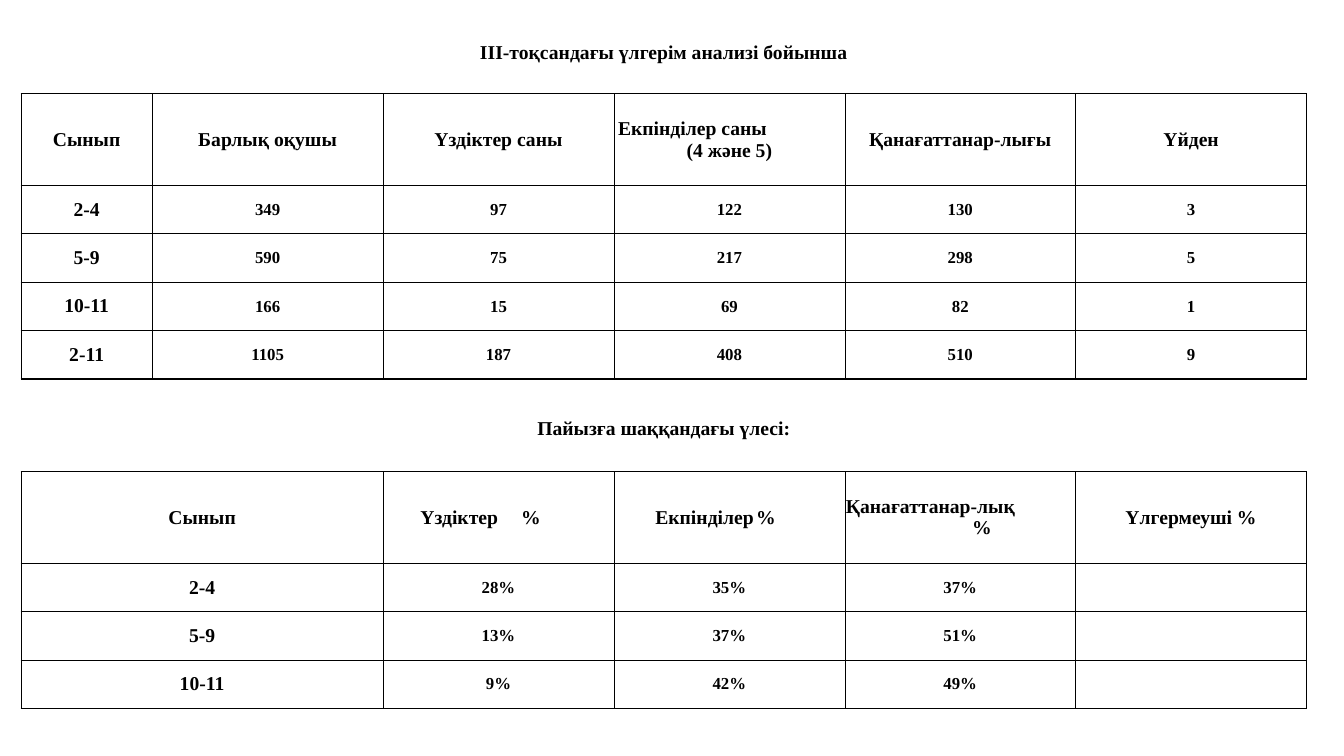
"""Build a slide with the term results and their shares in per cent."""
from pptx import Presentation
from pptx.dml.color import RGBColor
from pptx.enum import text as t
from pptx.oxml import parse_xml
from pptx.oxml.ns import nsdecls
from pptx.util import Inches, Pt

HUES = {"ink": "000000"}
FONT = "Times New Roman"
PLAIN = "{2D5ABB26-0587-4C30-8999-92F81FD0307C}"
MID, LEFT = t.PP_ALIGN.CENTER, t.PP_ALIGN.LEFT
WIDTHS = [1.3] + [2.29] * 5
HEIGHTS = [0.39, 0.21, 0.91] + [0.48] * 4 + [0.3, 0.3, 0.32, 0.91] + [0.48] * 3

COUNTS = [
    ["Сынып", "Барлық оқушы", "Үздіктер саны", "", "Қанағаттанар-лығы", "Үйден"],
    ["2-4", "349", "97", "122", "130", "3"],
    ["5-9", "590", "75", "217", "298", "5"],
    ["10-11", "166", "15", "69", "82", "1"],
    ["2-11", "1105", "187", "408", "510", "9"],
]
SHARES = [
    ["Сынып", "", "", "", "", "Үлгермеуші %"],
    ["2-4", "", "28%", "35%", "37%", ""],
    ["5-9", "", "13%", "37%", "51%", ""],
    ["10-11", "", "9%", "42%", "49%", ""],
]


def write(cell, words, size=14, align=MID, indent=0, tab=None, more=False):
    """Write one bold paragraph into a cell."""
    frame = cell.text_frame
    para = frame.add_paragraph() if more else frame.paragraphs[0]
    para.alignment = align
    props = para._p.get_or_add_pPr()
    props.set("marL", str(Inches(indent)))
    props.set("indent", "0")
    if tab:
        props.append(parse_xml(
            f'<a:tabLst {nsdecls("a")}><a:tab pos="{Inches(tab)}" algn="l"/></a:tabLst>'))
    run = para.add_run()
    run.text = words
    font = run.font
    font.name, font.size, font.bold = FONT, Pt(size), True
    font.color.rgb = RGBColor.from_string(HUES["ink"])


def clear(cell):
    """Strip a cell of insets and fill, and keep its empty line small."""
    cell.margin_left = cell.margin_right = cell.margin_top = cell.margin_bottom = 0
    cell.vertical_anchor = t.MSO_ANCHOR.MIDDLE
    cell.fill.background()
    cell.text_frame.paragraphs[0]._p.append(
        parse_xml(f'<a:endParaRPr {nsdecls("a")} sz="1000"/>'))


def edge(cell, outer):
    """Draw the four borders of a cell, heavier on its outer sides."""
    props = cell._tc.get_or_add_tcPr()
    for spot, side in enumerate("LRTB"):
        width = Pt(1 if side in outer else 0.5)
        props.insert(spot, parse_xml(
            f'<a:ln{side} {nsdecls("a")} w="{width}"><a:solidFill>'
            f'<a:srgbClr val="{HUES["ink"]}"/></a:solidFill></a:ln{side}>'))


def block(table, top, rows):
    """Fill a bordered block of the table from the given row down."""
    last = len(rows) - 1
    for r, row in enumerate(rows):
        for c, words in enumerate(row):
            cell = table.cell(top + r, c)
            if words:
                write(cell, words, 12 if r and c else 14)
            ends = {"L": c == 0, "R": c == len(row) - 1, "T": r == 0, "B": r == last}
            edge(cell, [side for side, on in ends.items() if on])


def head(table, row, words, anchor):
    """Write a heading across the whole table."""
    cell = table.cell(row, 0)
    cell.merge(table.cell(row, len(WIDTHS) - 1))
    cell.vertical_anchor = anchor
    write(cell, words)


def split(cell, first, second, indent, shift):
    """Write a label on two lines, the second one centred past a shift."""
    write(cell, first, align=LEFT, indent=indent)
    write(cell, second, indent=shift, more=True)


def spread(cell, words, inset, tab):
    """Write a label with its unit set apart at a tab stop."""
    cell.margin_left = Inches(inset)
    write(cell, f"{words}\t%", align=LEFT, tab=tab)


def report(slide, left, top):
    """Place the table with both blocks and their headings."""
    frame = slide.shapes.add_table(
        len(HEIGHTS), len(WIDTHS), Inches(left), Inches(top),
        Inches(sum(WIDTHS)), Inches(sum(HEIGHTS)))
    table = frame.table
    table.first_row = table.horz_banding = False
    table._tbl.tblPr[0].text = PLAIN
    for col, width in zip(table.columns, WIDTHS):
        col.width = Inches(width)
    for row, height in zip(table.rows, HEIGHTS):
        row.height = Inches(height)
    for cell in table.iter_cells():
        clear(cell)

    head(table, 0, "ІІІ-тоқсандағы үлгерім анализі бойынша", t.MSO_ANCHOR.MIDDLE)
    block(table, 2, COUNTS)
    split(table.cell(2, 3), "Екпінділер саны", "(4 және 5)", 0.04, 0)

    head(table, 8, "Пайызға шаққандағы үлесі:", t.MSO_ANCHOR.BOTTOM)
    block(table, 10, SHARES)
    for row in range(10, 10 + len(SHARES)):
        table.cell(row, 0).merge(table.cell(row, 1))
    spread(table.cell(10, 2), "Үздіктер", 0.37, 1.36)
    spread(table.cell(10, 3), "Екпінділер", 0.41, 1.27)
    split(table.cell(10, 4), "Қанағаттанар-лық", "%", 0.01, 0.43)


def main():
    """Build and save the deck."""
    deck = Presentation()
    deck.slide_width, deck.slide_height = Inches(13.33), Inches(7.5)
    slide = deck.slides.add_slide(deck.slide_layouts[6])
    report(slide, 0.21, 0.33)
    deck.save("out.pptx")


if __name__ == "__main__":
    main()
